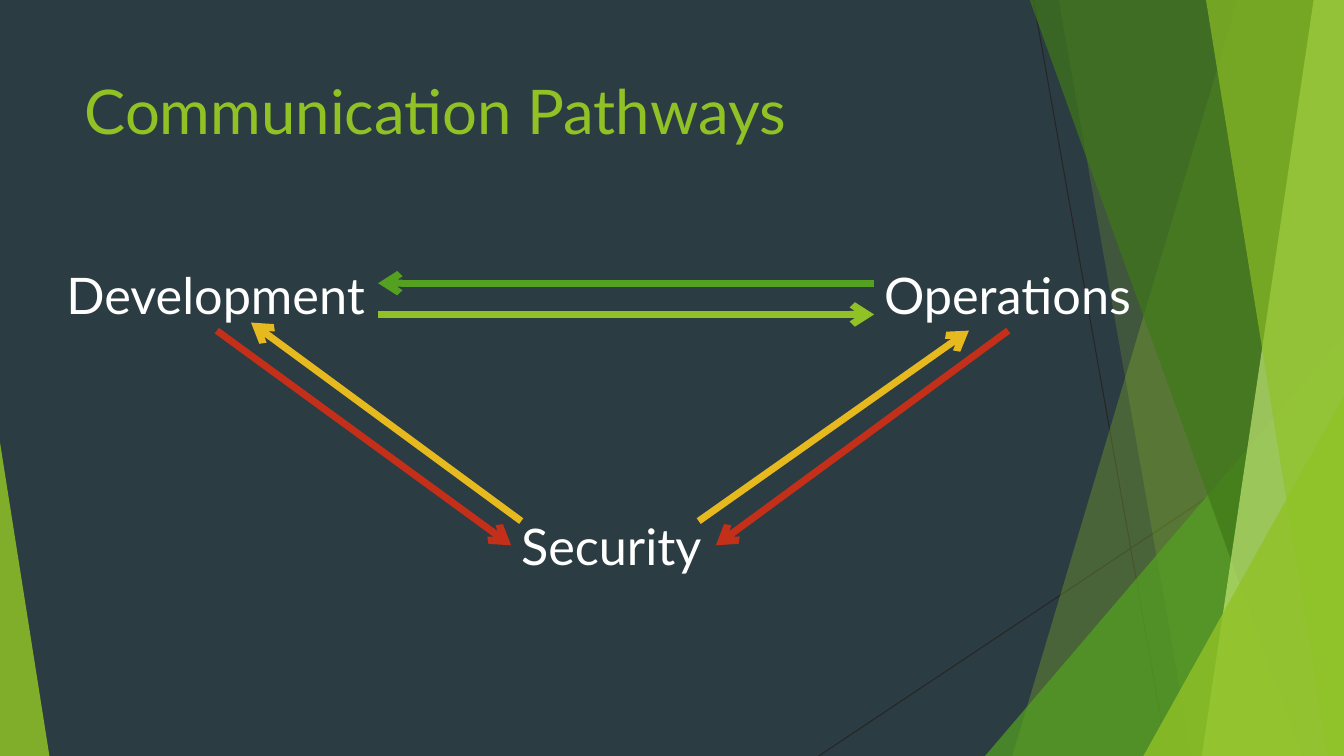
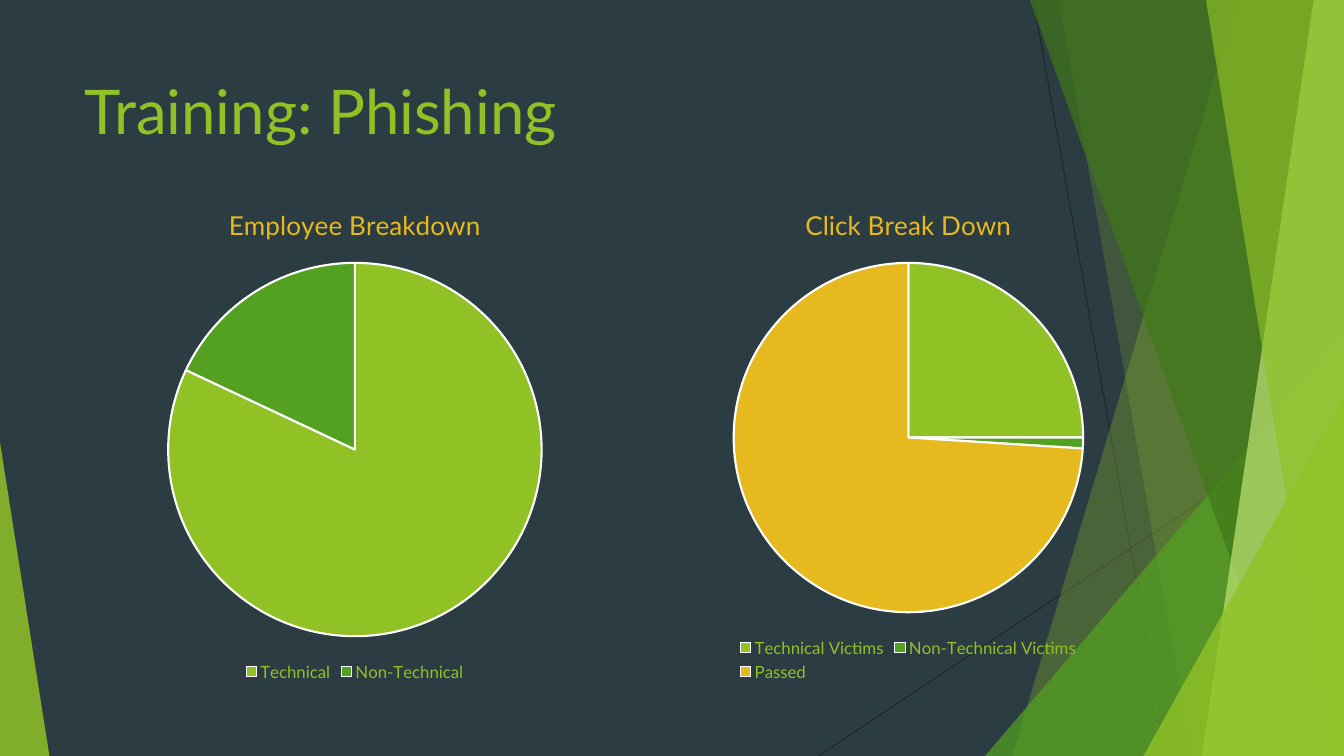
"""Build two dark slides: communication pathways and phishing training results."""
from lxml.etree import SubElement
from pptx import Presentation
from pptx.chart.data import CategoryChartData
from pptx.dml.color import RGBColor
from pptx.enum.chart import XL_CHART_TYPE as ChartType, XL_LEGEND_POSITION as LegendPosition
from pptx.enum.shapes import MSO_CONNECTOR as Connector, MSO_SHAPE as Shape
from pptx.enum.text import MSO_ANCHOR as Anchor
from pptx.oxml.ns import qn
from pptx.util import Pt

PX = 9144
WIDTH, HEIGHT = 1333, 750
FONT = "Lato"
LIME, GREEN, DARK_GREEN, PALE_LIME = "90C226", "54A021", "3F7819", "C0E474"
GOLD, RED, WHITE, CHARCOAL, SLATE = "E6B91E", "C42F1A", "FFFFFF", "262626", "2C3C43"
rgb = RGBColor.from_string


def add_text(slide, text, box, size, color, wrap):
    """Add a one-line text box."""
    frame = slide.shapes.add_textbox(*(value * PX for value in box)).text_frame
    frame.text = text
    frame.word_wrap = wrap
    frame.vertical_anchor = Anchor.TOP
    font = frame.paragraphs[0].runs[0].font
    font.name, font.size, font.color.rgb = FONT, Pt(size), rgb(color)


def add_line(slide, ends, color, width, arrow=False):
    """Add a straight line, with an arrowhead at its end if wanted."""
    connector = slide.shapes.add_connector(Connector.STRAIGHT, *(value * PX for value in ends))
    connector.line.color.rgb = rgb(color)
    connector.line.width = Pt(width)
    properties = connector.element.spPr
    if arrow:
        SubElement(properties.find(qn("a:ln")), qn("a:tailEnd"), type="arrow")
    SubElement(properties, qn("a:effectLst"))


presentation = Presentation()
presentation.slide_width, presentation.slide_height = WIDTH * PX, HEIGHT * PX
background = presentation.slide_master.background.fill
background.solid()
background.fore_color.rgb = rgb(SLATE)

bands = [
    ((1228, 1004), LIME, 30),
    ((1050, 1182), LIME, 20),
    ((977, 333, 356, 1), GREEN, 72),
    ((1021, 1291), DARK_GREEN, 70),
    ((1303, 1192), PALE_LIME, 70),
    ((1196, 1317), LIME, 65),
    ((1134, 393, 199, 1), LIME, 80),
    ((0, 439, 49, 0), LIME, 85),
]
slides = []
for title in ("Communication Pathways", "Training: Phishing"):
    slide = presentation.slides.add_slide(presentation.slide_layouts[6])
    slides.append(slide)
    for ends in ((1025, 0, 1158, HEIGHT), (WIDTH, 403, 812, HEIGHT)):
        add_line(slide, ends, CHARCOAL, 0.75)
    for outline, color, opacity in bands:
        if len(outline) == 2:
            top_left, bottom_left = outline
            builder = slide.shapes.build_freeform(top_left, -1, scale=PX)
            builder.add_line_segments([(WIDTH, -1), (WIDTH, HEIGHT), (bottom_left, HEIGHT)])
            shape = builder.convert_to_shape()
        else:
            left, top, width, apex = outline
            shape = slide.shapes.add_shape(
                Shape.ISOSCELES_TRIANGLE, left * PX, top * PX, width * PX, (HEIGHT - top) * PX)
            shape.adjustments[0] = apex
        shape.shadow.inherit = False
        shape.line.fill.background()
        shape.fill.solid()
        shape.fill.fore_color.rgb = rgb(color)
        color_element = shape.element.spPr.find(".//" + qn("a:srgbClr"))
        SubElement(color_element, qn("a:alpha"), val=str(opacity * 1000))
    add_text(slide, title, (74, 67, 940, 144), 44, LIME, True)

pathways, training = slides

teams = [
    ("Development", (56, 257, 320, 71)),
    ("Operations", (867, 257, 267, 71)),
    ("Security", (507, 506, 204, 71)),
]
for team, box in teams:
    add_text(pathways, team, box, 36, WHITE, False)

arrows = [
    ((375, 312, 867, 312), LIME),
    ((867, 281, 375, 281), GREEN),
    ((693, 517, 961, 328), GOLD),
    ((517, 517, 249, 320), GOLD),
    ((215, 328, 507, 541), RED),
    ((1000, 328, 710, 541), RED),
]
for ends, color in arrows:
    add_line(pathways, ends, color, 5, arrow=True)

pies = [
    (92, "Employee Breakdown", {"Technical": 82, "Non-Technical": 18}),
    (641, "Click Break Down", {"Technical Victims": 25, "Non-Technical Victims": 1, "Passed": 74}),
]
for left, title, shares in pies:
    data = CategoryChartData()
    data.categories = list(shares)
    data.add_series(title, list(shares.values()))
    chart = training.shapes.add_chart(
        ChartType.PIE, left * PX, 185 * PX, 520 * PX, 495 * PX, data).chart
    chart.font.name, chart.font.size, chart.font.color.rgb = FONT, Pt(10), rgb(WHITE)

    chart.has_title = True
    chart.chart_title.text_frame.text = title
    font = chart.chart_title.text_frame.paragraphs[0].runs[0].font
    font.name, font.size, font.bold, font.color.rgb = FONT, Pt(18.6), False, rgb(GOLD)

    chart.has_legend = True
    chart.legend.position = LegendPosition.BOTTOM
    chart.legend.include_in_layout = False
    font = chart.legend.font
    font.name, font.size, font.color.rgb = FONT, Pt(12), rgb(LIME)

    plot = chart.plots[0]
    plot.vary_by_categories = True
    for index, color in zip(range(len(shares)), (LIME, GREEN, GOLD)):
        slice_format = plot.series[0].points[index].format
        slice_format.fill.solid()
        slice_format.fill.fore_color.rgb = rgb(color)
        slice_format.line.color.rgb = rgb(WHITE)
        slice_format.line.width = Pt(1.5)

presentation.save("out.pptx")
